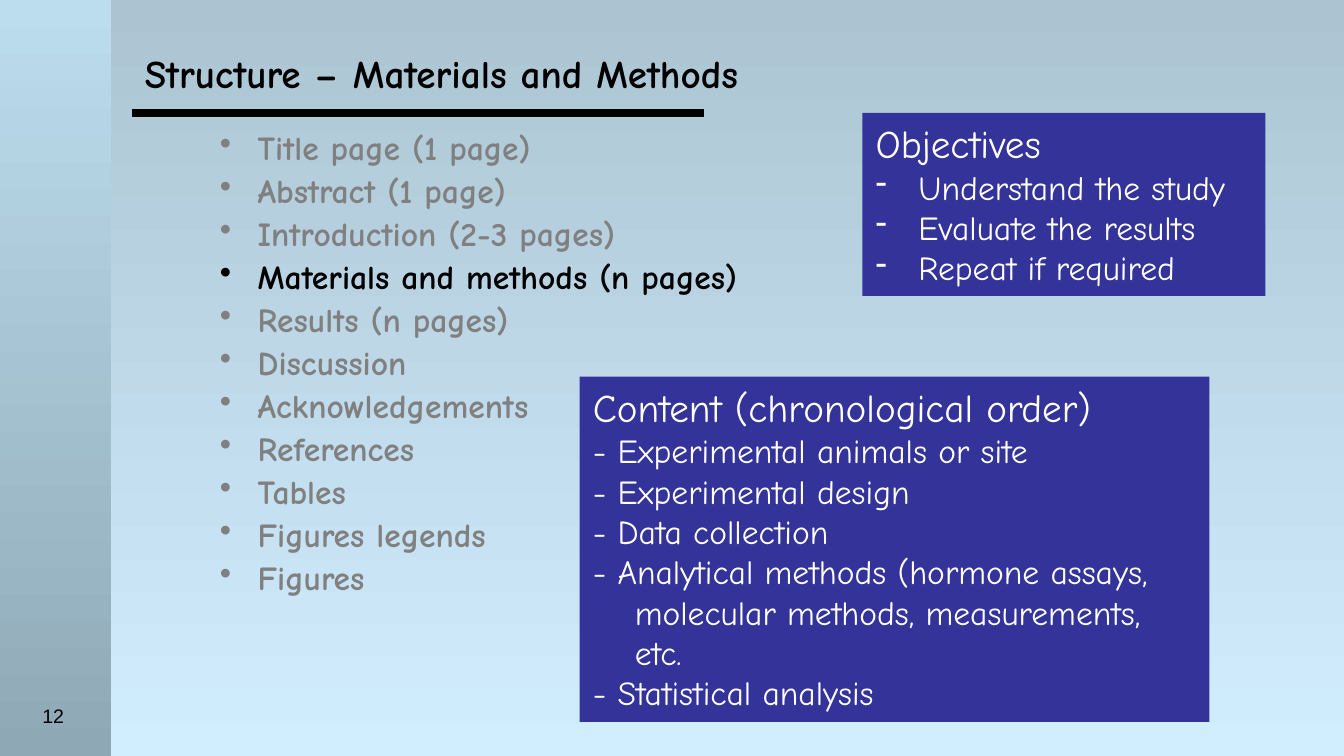
from lxml import etree
from pptx import Presentation
from pptx import util as u
from pptx.dml.color import RGBColor
from pptx.enum import shapes, text
from pptx.oxml.ns import qn

BLACK = RGBColor(0x00, 0x00, 0x00)
WHITE = RGBColor(0xFF, 0xFF, 0xFF)
GREY = RGBColor(0x80, 0x80, 0x80)
NAVY = RGBColor(0x33, 0x33, 0x99)
SKY_TOP = RGBColor(0xAC, 0xC4, 0xD2)
SKY_BOTTOM = RGBColor(0xD1, 0xEE, 0xFF)
BAND_TOP = RGBColor(0xBC, 0xDD, 0xEE)
BAND_BOTTOM = RGBColor(0x8F, 0xA8, 0xB5)
FONT = "Comic Neue"


def add_run(paragraph, words, size, color, bold=False, font=FONT):
    run = paragraph.add_run()
    run.text = words
    run.font.name = font
    run.font.size = u.Pt(size)
    run.font.bold = bold
    run.font.color.rgb = color


def set_indent(paragraph, indent, bullet=None):
    properties = paragraph._p.get_or_add_pPr()
    properties.set("marL", str(u.Pt(indent)))
    properties.set("indent", str(-u.Pt(indent)))
    if bullet:
        etree.SubElement(properties, qn("a:buChar")).set("char", bullet)


presentation = Presentation()
presentation.slide_width = u.Pt(720)
presentation.slide_height = u.Pt(405)
slide = presentation.slides.add_slide(presentation.slide_layouts[6])

band = slide.shapes.add_shape(shapes.MSO_SHAPE.RECTANGLE, u.Pt(-0.5), u.Pt(0), u.Pt(60), u.Pt(405))
band.shadow.inherit = False
band.line.fill.background()

for fill, colors in (
    (slide.background.fill, (SKY_TOP, SKY_BOTTOM)),
    (band.fill, (BAND_TOP, BAND_BOTTOM)),
):
    fill.gradient()
    fill.gradient_angle = 270
    for stop, color in zip(fill.gradient_stops, colors):
        stop.color.rgb = color

rule = slide.shapes.add_connector(shapes.MSO_CONNECTOR.STRAIGHT, u.Pt(71), u.Pt(60.5), u.Pt(377), u.Pt(60.5))
rule.line.color.rgb = BLACK
rule.line.width = u.Pt(4.5)
etree.SubElement(rule._element.spPr, qn("a:effectLst"))

page_number = slide.shapes.add_textbox(u.Pt(0), u.Pt(373.5), u.Pt(57), u.Pt(27.5))
page_number.text_frame.word_wrap = True
paragraph = page_number.text_frame.paragraphs[0]
paragraph.alignment = text.PP_ALIGN.CENTER
add_run(paragraph, "12", 10.5, BLACK, font="Arial")

title = slide.shapes.add_textbox(u.Pt(70.5), u.Pt(21), u.Pt(459), u.Pt(36))
title.text_frame.word_wrap = True
title.text_frame.vertical_anchor = text.MSO_ANCHOR.MIDDLE
add_run(title.text_frame.paragraphs[0], "Structure – Materials and Methods", 21, BLACK, bold=True)

sections = [
    "Title page (1 page)",
    "Abstract (1 page)",
    "Introduction (2-3 pages)",
    "Materials and methods (n pages)",
    "Results (n pages)",
    "Discussion",
    "Acknowledgements",
    "References",
    "Tables",
    "Figures legends",
    "Figures",
]
current_section = "Materials and methods (n pages)"

outline = slide.shapes.add_textbox(u.Pt(112.5), u.Pt(67.5), u.Pt(396), u.Pt(274.5))
frame = outline.text_frame
frame.word_wrap = True
frame.margin_left = frame.margin_right = u.Pt(5.3)
frame.margin_top = frame.margin_bottom = u.Pt(2.7)
for index, section in enumerate(sections):
    paragraph = frame.add_paragraph() if index else frame.paragraphs[0]
    set_indent(paragraph, 20.25, "•")
    paragraph.line_spacing = 0.9
    if index:
        paragraph.space_before = u.Pt(3.6)
    add_run(paragraph, section, 18, BLACK if section == current_section else GREY, bold=True)

content = [
    "- Experimental animals or site",
    "- Experimental design",
    "- Data collection",
    "- Analytical methods (hormone assays, molecular methods, measurements, etc.",
    "- Statistical analysis",
]
objectives = ["Understand the study", "Evaluate the results", "Repeat if required"]
panels = [
    ((310.5, 201.75, 337.5, 185), "Content (chronological order)", content, 22.5, None),
    ((462, 60.5, 216, 98), "Objectives", objectives, 23, "-"),
]
for box, heading, items, indent, bullet in panels:
    panel = slide.shapes.add_shape(shapes.MSO_SHAPE.RECTANGLE, *map(u.Pt, box))
    panel.shadow.inherit = False
    panel.fill.solid()
    panel.fill.fore_color.rgb = NAVY
    panel.line.fill.background()
    frame = panel.text_frame
    frame.word_wrap = True
    frame.vertical_anchor = text.MSO_ANCHOR.TOP
    paragraph = frame.paragraphs[0]
    paragraph.alignment = text.PP_ALIGN.LEFT
    add_run(paragraph, heading, 21, WHITE)
    for item in items:
        paragraph = frame.add_paragraph()
        paragraph.alignment = text.PP_ALIGN.LEFT
        set_indent(paragraph, indent, bullet)
        add_run(paragraph, item, 18, WHITE)

presentation.save("out.pptx")
